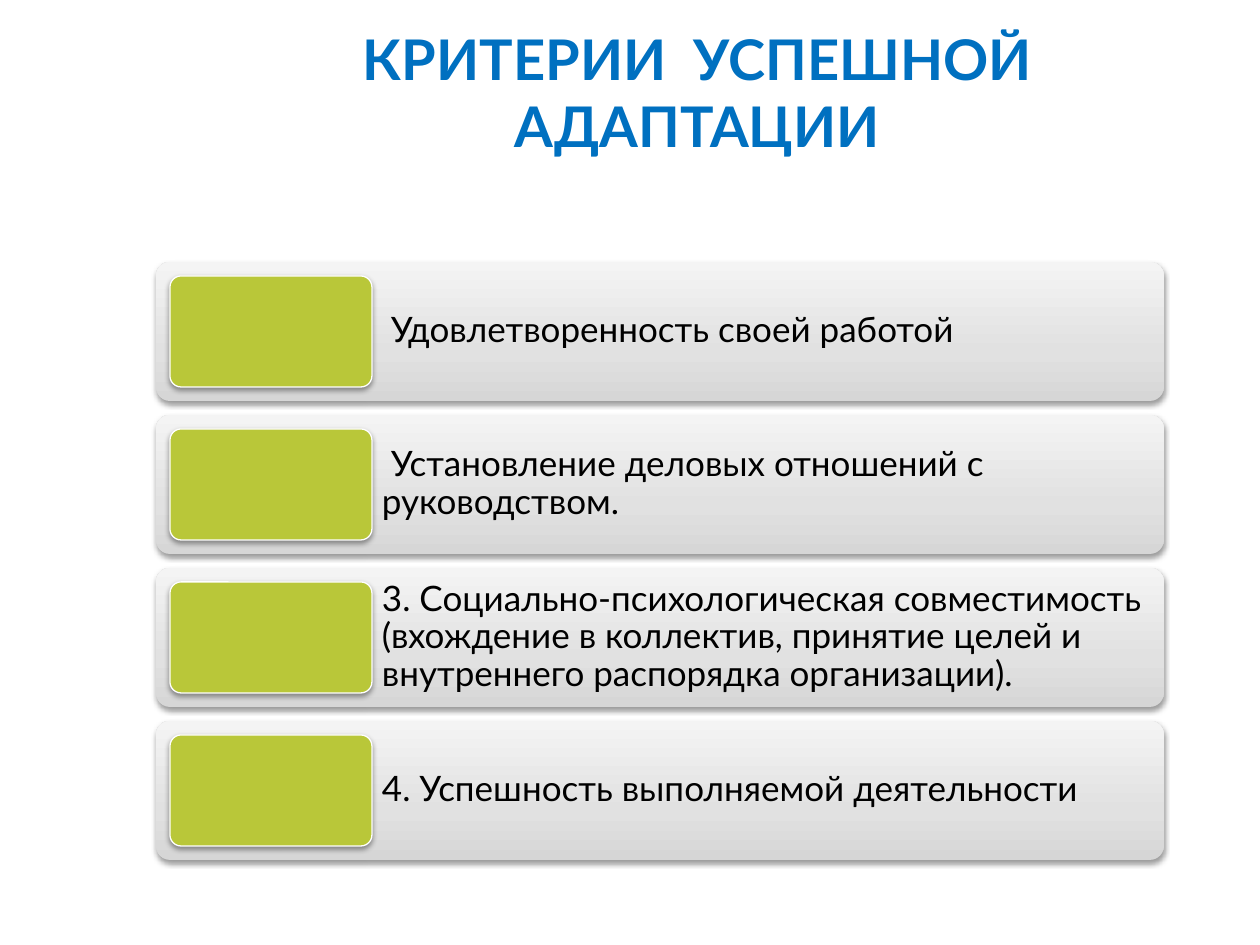
"""Build a slide listing the criteria of successful adaptation."""
import copy
import dataclasses

import lxml.etree
import pptx
import pptx.dml.color
import pptx.enum.shapes
import pptx.enum.text
import pptx.oxml.ns
import pptx.util

RGB = pptx.dml.color.RGBColor
BLUE = RGB(0x00, 0x70, 0xC0)
BLACK = RGB(0x00, 0x00, 0x00)
WHITE = RGB(0xFF, 0xFF, 0xFF)
LIME = RGB(0xB9, 0xC7, 0x39)
GREYS = (
    (0.0, RGB(0xD6, 0xD6, 0xD6)),
    (0.35, RGB(0xE1, 0xE1, 0xE1)),
    (1.0, RGB(0xF4, 0xF4, 0xF4)),
)
FONT = "Lato"
SCALE = 914400 / 126
PITCH = 153
PAD = 14
ITEMS = (
    " Удовлетворенность своей работой",
    " Установление деловых отношений с руководством.",
    "3. Социально-психологическая совместимость (вхождение в коллектив, "
    "принятие целей и внутреннего распорядка организации).",
    "4. Успешность выполняемой деятельности",
)
qn = pptx.oxml.ns.qn


@dataclasses.dataclass(frozen=True)
class Box:
    """A rectangle in px."""

    left: int
    top: int
    width: int
    height: int

    def emu(self) -> list:
        """Return the four lengths in EMU."""
        return [px(n) for n in dataclasses.astuple(self)]


def px(count: int) -> int:
    """Turn px into EMU."""
    return round(count * SCALE)


def write(slide, box: Box, text: str, *, size: int, color: RGB,
          bold: bool = False, align=pptx.enum.text.PP_ALIGN.LEFT,
          line: float = 1.0, inset: int = 10) -> None:
    """Add a wrapped text box centred in height."""
    frame = slide.shapes.add_textbox(*box.emu()).text_frame
    frame.word_wrap = True
    frame.vertical_anchor = pptx.enum.text.MSO_ANCHOR.MIDDLE
    frame.margin_left = frame.margin_right = px(inset)
    frame.margin_top = frame.margin_bottom = px(inset)
    para = frame.paragraphs[0]
    para.alignment = align
    para.line_spacing = line
    run = para.add_run()
    run.text = text
    run.font.name = FONT
    run.font.size = pptx.util.Pt(size)
    run.font.bold = bold
    run.font.color.rgb = color


def shade(shape) -> None:
    """Give a shape a soft shadow below it."""
    shape.shadow.inherit = False
    effects = shape._element.spPr.find(qn("a:effectLst"))
    outer = lxml.etree.SubElement(
        effects, qn("a:outerShdw"), blurRad=str(pptx.util.Pt(3.1)),
        dist=str(pptx.util.Pt(1.6)), dir="5400000", rotWithShape="0")
    tint = lxml.etree.SubElement(outer, qn("a:srgbClr"), val="000000")
    lxml.etree.SubElement(tint, qn("a:alpha"), val="38000")


def panel(slide, box: Box):
    """Add a rounded panel with a shadow."""
    kind = pptx.enum.shapes.MSO_SHAPE.ROUNDED_RECTANGLE
    shape = slide.shapes.add_shape(kind, *box.emu())
    shape.adjustments[0] = 0.1
    shade(shape)
    return shape


def blend(shape) -> None:
    """Fill a shape with greys that lighten upward."""
    shape.fill.gradient()
    shape.fill.gradient_angle = 90
    stops = shape._element.spPr.find(".//" + qn("a:gsLst"))
    stops.append(copy.deepcopy(stops[0]))
    for stop, (place, color) in zip(shape.fill.gradient_stops, GREYS):
        stop.position = place
        stop.color.rgb = color


def row(slide, box: Box, text: str) -> None:
    """Draw one criterion with its lime tile."""
    back = panel(slide, box)
    blend(back)
    back.line.fill.background()
    tile = Box(box.left + PAD, box.top + PAD, 202, box.height - 2 * PAD)
    edge = tile.left + tile.width
    words = Box(edge, box.top, box.left + box.width - edge, box.height)
    write(slide, words, text, size=20, color=BLACK, line=0.9)
    front = panel(slide, tile)
    front.fill.solid()
    front.fill.fore_color.rgb = LIME
    front.line.color.rgb = WHITE
    front.line.width = pptx.util.Pt(0.75)


def main() -> None:
    """Build and save the slide."""
    deck = pptx.Presentation()
    deck.slide_width, deck.slide_height = px(1260), px(945)
    slide = deck.slides.add_slide(deck.slide_layouts[6])
    for i, text in enumerate(ITEMS):
        row(slide, Box(156, 262 + i * PITCH, 1008, 139), text)
    write(slide, Box(198, 60, 999, 63), "КРИТЕРИИ  УСПЕШНОЙ АДАПТАЦИИ",
          size=32, color=BLUE, bold=True,
          align=pptx.enum.text.PP_ALIGN.CENTER)
    deck.save("out.pptx")


if __name__ == "__main__":
    main()
